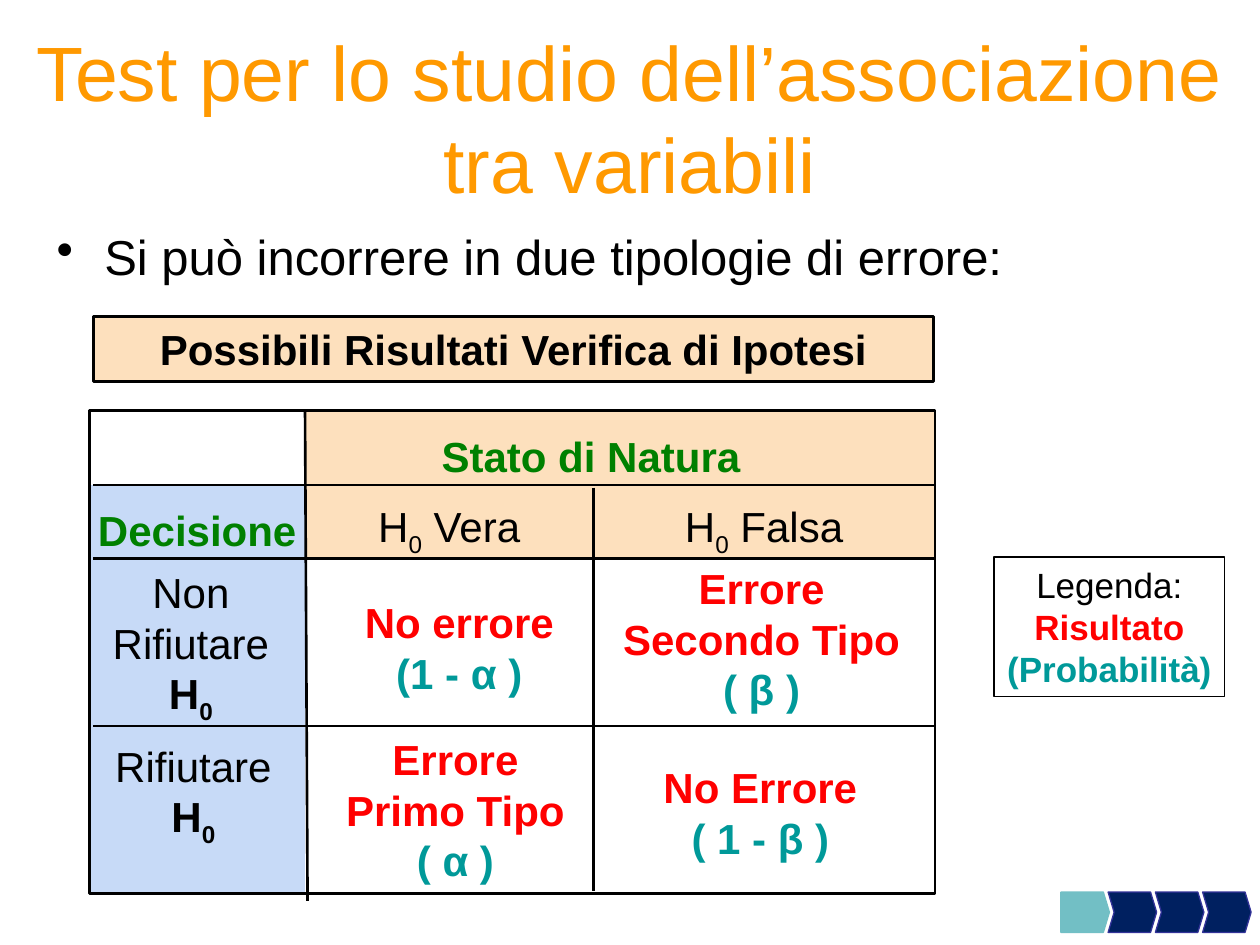
from dataclasses import dataclass

from lxml import etree
from pptx import Presentation
from pptx import util as u
from pptx.dml.color import RGBColor
from pptx.enum import shapes, text
from pptx.oxml.ns import qn


@dataclass(frozen=True)
class Theme:
    font: str = "Arial"
    ink: str = "000000"
    title: str = "FF9900"
    heading: str = "008000"
    result: str = "FF0000"
    chance: str = "009999"
    peach: str = "FDE0BD"
    sky: str = "C7DAF7"
    navy: str = "002060"
    navy_edge: str = "333399"
    teal: str = "72BFC5"
    title_size: int = 44
    body_size: int = 28
    table_size: int = 24
    legend_size: int = 20
    rule: float = 1.5
    hairline: float = 0.75


@dataclass(frozen=True)
class Box:
    left: float
    top: float
    width: float
    height: float

    def inches(self):
        return [u.Inches(v) for v in (self.left, self.top, self.width, self.height)]


THEME = Theme()
SLIDE = Box(0, 0, 10, 7.5)
H0 = ("H", "0")  # the second part is set as a subscript


def color(code):
    return RGBColor.from_string(code)


def add_block(page, box, fill=None, line=None, weight=THEME.rule,
              kind=shapes.MSO_SHAPE.RECTANGLE):
    block = page.shapes.add_shape(kind, *box.inches())
    block.shadow.inherit = False
    if fill:
        block.fill.solid()
        block.fill.fore_color.rgb = color(fill)
    else:
        block.fill.background()
    if line:
        block.line.color.rgb = color(line)
        block.line.width = u.Pt(weight)
    else:
        block.line.fill.background()
    return block


def add_rule(page, x1, y1, x2, y2):
    rule = page.shapes.add_connector(shapes.MSO_CONNECTOR.STRAIGHT,
                                     *[u.Inches(v) for v in (x1, y1, x2, y2)])
    rule.line.color.rgb = color(THEME.ink)
    rule.line.width = u.Pt(THEME.rule)
    etree.SubElement(rule._element.spPr, qn("a:effectLst"))


def write(shape, lines, size, inset=0.0):
    """Fill a shape with centred lines of (words, colour, bold).

    Words are a string, or a tuple whose second part is a subscript.
    """
    frame = shape.text_frame
    frame.word_wrap = True
    frame.vertical_anchor = text.MSO_ANCHOR.MIDDLE
    frame.margin_left = frame.margin_right = u.Inches(inset)
    frame.margin_top = frame.margin_bottom = u.Inches(inset / 2)
    for index, (words, ink, bold) in enumerate(lines):
        para = frame.add_paragraph() if index else frame.paragraphs[0]
        para.alignment = text.PP_ALIGN.CENTER
        para.font.name = THEME.font
        para.font.size = u.Pt(size)
        para.font.bold = bold
        para.font.color.rgb = color(ink)
        parts = (words,) if isinstance(words, str) else words
        for place, part in enumerate(parts):
            span = para.add_run()
            span.text = part
            if place == 1:
                span.font._element.set("baseline", "-25000")


def add_words(page, box, lines, size, inset=0.0):
    label = page.shapes.add_textbox(*box.inches())
    write(label, lines, size, inset)
    return label


def add_title(page, box):
    words = "Test per lo studio dell’associazione tra variabili"
    add_words(page, box, [(words, THEME.title, False)], THEME.title_size, 0.1)


def add_bullet(page, box):
    words = "Si può incorrere in due tipologie di errore:"
    label = add_words(page, box, [(words, THEME.ink, False)], THEME.body_size, 0.1)
    label.text_frame.vertical_anchor = text.MSO_ANCHOR.TOP
    para = label.text_frame.paragraphs[0]
    para.alignment = text.PP_ALIGN.JUSTIFY
    para.space_before = u.Pt(4)
    props = para._p.get_or_add_pPr()
    props.set("marL", str(u.Inches(0.38)))
    props.set("indent", str(u.Inches(-0.38)))
    etree.SubElement(props, qn("a:buChar")).set("char", "•")
    # the bullet has to come before the default run properties
    props.append(props.find(qn("a:defRPr")))


def add_banner(page, box):
    banner = add_block(page, box, THEME.peach, THEME.ink)
    write(banner, [("Possibili Risultati Verifica di Ipotesi", THEME.ink, True)],
          THEME.table_size, 0.1)


def add_decision_grid(page, box):
    """Place the table of decisions against states of nature."""
    xs = [box.left + box.width * share for share in (0, 0.255, 0.596, 1)]
    ys = [box.top + box.height * share for share in (0, 0.154, 0.306, 0.653, 1)]

    def area(col, row, last_col, last_row):
        return Box(xs[col], ys[row], xs[last_col] - xs[col], ys[last_row] - ys[row])

    add_block(page, area(1, 0, 3, 2), THEME.peach)
    add_block(page, area(0, 1, 1, 4), THEME.sky)
    add_block(page, box, line=THEME.ink)
    for y in ys[1:-1]:
        add_rule(page, xs[0] + 0.03, y, xs[-1], y)
    add_rule(page, xs[1], ys[0], xs[1] + 0.02, ys[-1] + 0.06)
    add_rule(page, xs[2], ys[1] + 0.02, xs[2], ys[-1] - 0.02)

    def plain(*words):
        return [(part, THEME.ink, False) for part in words]

    def outcome(*words):
        *results, chance = words
        return [(part, THEME.result, True) for part in results] + [
            (chance, THEME.chance, True)]

    hypothesis = [(H0, THEME.ink, True)]
    # column, row, last column, shift right, shift down, lines
    cells = [
        (1, 0, 3, -0.23, 0.06, [("Stato di Natura", THEME.heading, True)]),
        (0, 1, 1, 0, 0.06, [("Decisione", THEME.heading, True)]),
        (1, 1, 2, 0, 0.06, plain((*H0, " Vera"))),
        (2, 1, 3, 0, 0.06, plain((*H0, " Falsa"))),
        (0, 2, 1, -0.05, 0.03, plain("Non", "Rifiutare") + hypothesis),
        (1, 2, 2, 0.08, 0.04, outcome("No errore", "(1 - α )")),
        (2, 2, 3, -0.02, -0.03, outcome("Errore", "Secondo Tipo", "( β )")),
        (0, 3, 1, -0.03, -0.12, plain("Rifiutare") + hypothesis),
        (1, 3, 2, 0.05, 0, outcome("Errore", "Primo Tipo", "( α )")),
        (2, 3, 3, -0.03, 0.02, outcome("No Errore", "( 1 - β )")),
    ]
    for col, row, last_col, right, down, lines in cells:
        cell = area(col, row, last_col, row + 1)
        place = Box(cell.left + right, cell.top + down, cell.width, cell.height)
        add_words(page, place, lines, THEME.table_size)


def add_legend(page, box):
    legend = add_block(page, box, line=THEME.ink, weight=THEME.hairline)
    write(legend, [("Legenda:", THEME.ink, False), ("Risultato", THEME.result, True),
                   ("(Probabilità)", THEME.chance, True)], THEME.legend_size, 0.1)
    legend.text_frame.word_wrap = False


def add_progress(page, box, steps=4):
    """Draw a row of arrows, the first one marked as current."""
    pitch = box.width / steps
    for step in range(steps):
        place = Box(box.left + step * pitch, box.top, pitch + 0.01, box.height)
        if step == 0:
            arrow = add_block(page, place, THEME.teal, THEME.teal, THEME.hairline,
                              shapes.MSO_SHAPE.PENTAGON)
        else:
            arrow = add_block(page, place, THEME.navy, THEME.navy_edge,
                              THEME.hairline, shapes.MSO_SHAPE.CHEVRON)
        arrow.adjustments[0] = 0.15


def main():
    deck = Presentation()
    deck.slide_width, deck.slide_height = SLIDE.inches()[2:]
    page = deck.slides.add_slide(deck.slide_layouts[6])
    add_title(page, Box(0, 0.3, SLIDE.width, 1.25))
    add_bullet(page, Box(0.35, 1.75, 9.21, 0.48))
    add_banner(page, Box(0.74, 2.51, 6.67, 0.52))
    add_decision_grid(page, Box(0.71, 3.26, 6.71, 3.83))
    add_legend(page, Box(7.89, 4.42, 1.83, 1.11))
    add_progress(page, Box(8.42, 7.08, 1.5, 0.32))
    deck.save("out.pptx")


if __name__ == "__main__":
    main()
